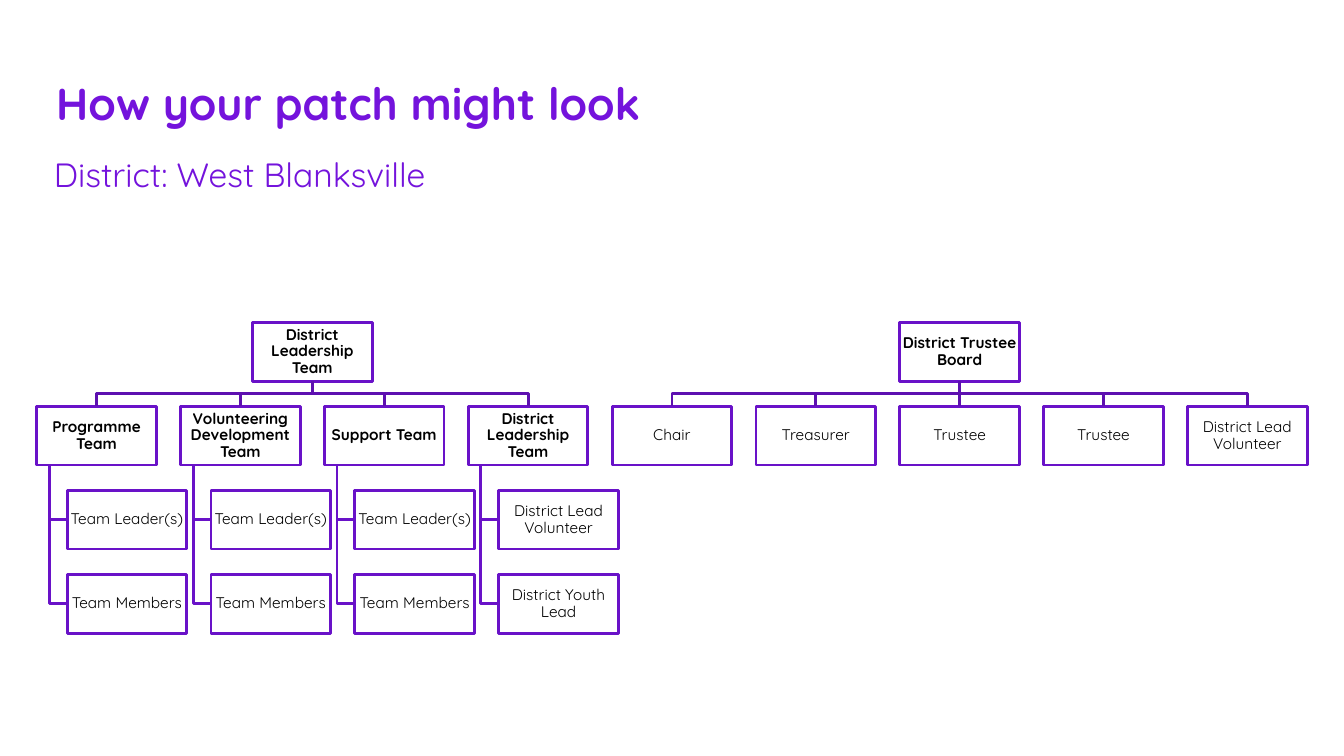
from dataclasses import dataclass

from lxml.etree import SubElement
from pptx import Presentation
from pptx.dml.color import RGBColor
from pptx.enum.shapes import MSO_CONNECTOR, MSO_SHAPE
from pptx.enum.text import MSO_ANCHOR, MSO_AUTO_SIZE, PP_ALIGN
from pptx.oxml.ns import qn
from pptx.util import Emu, Pt


@dataclass(frozen=True)
class Theme:
    font: str = "Quicksand"
    heading: RGBColor = RGBColor(0x74, 0x13, 0xDC)
    border: RGBColor = RGBColor(0x69, 0x12, 0xC8)
    branch: RGBColor = RGBColor(0x5D, 0x10, 0xB0)
    box_fill: RGBColor = RGBColor(0xFF, 0xFF, 0xFF)
    box_text: RGBColor = RGBColor(0, 0, 0)
    title_size: int = 32
    subtitle_size: int = 24
    box_size: int = 11
    line_width: int = 2


THEME = Theme()

# Chart grid, in px at 96 to the inch
BOX_W, BOX_H = 114, 56
CHART_LEFT, CHART_TOP = 35, 307
COLUMN_STEP, ROW_STEP = 137, 80
SPINE_INDENT, MEMBER_INDENT = 12, 29

LEADERSHIP = "District Leadership Team"
TEAMS = [
    ("Programme Team", ["Team Leader(s)", "Team Members"]),
    ("Volunteering Development Team", ["Team Leader(s)", "Team Members"]),
    ("Support Team", ["Team Leader(s)", "Team Members"]),
    ("District Leadership Team", ["District Lead Volunteer", "District Youth Lead"]),
]
BOARD = "District Trustee Board"
TRUSTEES = ["Chair", "Treasurer", "Trustee", "Trustee", "District Lead Volunteer"]


def px(length):
    return Emu(int(length * 9525))


def column_left(column):
    return CHART_LEFT + column * COLUMN_STEP


def row_top(row):
    return CHART_TOP + row * ROW_STEP


def add_run(paragraph, text, size, color, bold):
    run = paragraph.add_run()
    run.text = text
    run.font.name = THEME.font
    run.font.size = Pt(size)
    run.font.bold = bold
    run.font.color.rgb = color


def add_heading(slide, text, left, top, height, size, bold=False):
    heading = slide.shapes.add_textbox(px(left), px(top), px(772), px(height))
    frame = heading.text_frame
    frame.word_wrap = True
    frame.auto_size = MSO_AUTO_SIZE.SHAPE_TO_FIT_TEXT
    paragraph = frame.paragraphs[0]
    properties = paragraph._p.get_or_add_pPr()
    properties.set("marL", str(px(7)))
    properties.set("indent", "0")
    add_run(paragraph, text, size, THEME.heading, bold)


def add_role(slide, text, left, row, bold=False):
    role = slide.shapes.add_shape(
        MSO_SHAPE.RECTANGLE, px(left), px(row_top(row)), px(BOX_W), px(BOX_H))
    role.shadow.inherit = False
    role.fill.solid()
    role.fill.fore_color.rgb = THEME.box_fill
    role.line.color.rgb = THEME.border
    role.line.width = Pt(THEME.line_width)
    frame = role.text_frame
    frame.word_wrap = True
    frame.vertical_anchor = MSO_ANCHOR.MIDDLE
    frame.margin_left = frame.margin_right = px(1)
    frame.margin_top = frame.margin_bottom = px(1)
    paragraph = frame.paragraphs[0]
    paragraph.alignment = PP_ALIGN.CENTER
    paragraph.line_spacing = 0.9
    add_run(paragraph, text, THEME.box_size, THEME.box_text, bold)
    return role


def add_bent_line(slide, points, color):
    start, *corners = [(px(x), px(y)) for x, y in points]
    builder = slide.shapes.build_freeform(*start)
    builder.add_line_segments(corners, close=False)
    bent_line = builder.convert_to_shape()
    bent_line.shadow.inherit = False
    bent_line.fill.background()
    bent_line.line.color.rgb = color
    bent_line.line.width = Pt(THEME.line_width)


def add_straight_line(slide, parent, child):
    straight_line = slide.shapes.add_connector(MSO_CONNECTOR.STRAIGHT, 0, 0, 0, 0)
    straight_line.begin_connect(parent, 2)
    straight_line.end_connect(child, 0)
    straight_line.line.color.rgb = THEME.branch
    straight_line.line.width = Pt(THEME.line_width)
    SubElement(straight_line._element.spPr, qn("a:effectLst"))


def add_tree(slide, root_text, child_texts, first_column, bold_children):
    """Draw a root box centred over a row of child boxes."""
    lefts = [column_left(first_column + i) for i in range(len(child_texts))]
    root_left = (lefts[0] + lefts[-1]) / 2
    root_x = root_left + BOX_W / 2
    root_bottom, child_top = row_top(0) + BOX_H, row_top(1)
    bus_y = (root_bottom + child_top) / 2

    root = add_role(slide, root_text, root_left, 0, bold=True)
    for text, left in zip(child_texts, lefts):
        child = add_role(slide, text, left, 1, bold_children)
        child_x = left + BOX_W / 2
        if child_x == root_x:
            add_straight_line(slide, root, child)
        else:
            add_bent_line(slide, [(root_x, root_bottom), (root_x, bus_y),
                                  (child_x, bus_y), (child_x, child_top)], THEME.branch)


def add_members(slide, members, column):
    """Hang member boxes from the left part of a team box."""
    spine_x = column_left(column) + SPINE_INDENT
    member_left = column_left(column) + MEMBER_INDENT
    for row, member in enumerate(members, start=2):
        middle = row_top(row) + BOX_H / 2
        add_bent_line(slide, [(spine_x, row_top(1) + BOX_H), (spine_x, middle),
                              (member_left, middle)], THEME.border)
        add_role(slide, member, member_left, row)


def main():
    presentation = Presentation()
    presentation.slide_width, presentation.slide_height = px(1280), px(720)
    slide = presentation.slides.add_slide(presentation.slide_layouts[6])

    # Headings
    add_heading(slide, "How your patch might look", 37, 67, 61, THEME.title_size, bold=True)
    add_heading(slide, "District: West Blanksville", 35, 142, 48, THEME.subtitle_size)

    # Leadership team, its teams and their members
    add_tree(slide, LEADERSHIP, [team for team, _ in TEAMS], 0, bold_children=True)
    for column, (_, members) in enumerate(TEAMS):
        add_members(slide, members, column)

    # Trustee board
    add_tree(slide, BOARD, TRUSTEES, len(TEAMS), bold_children=False)

    presentation.save("out.pptx")


if __name__ == "__main__":
    main()
